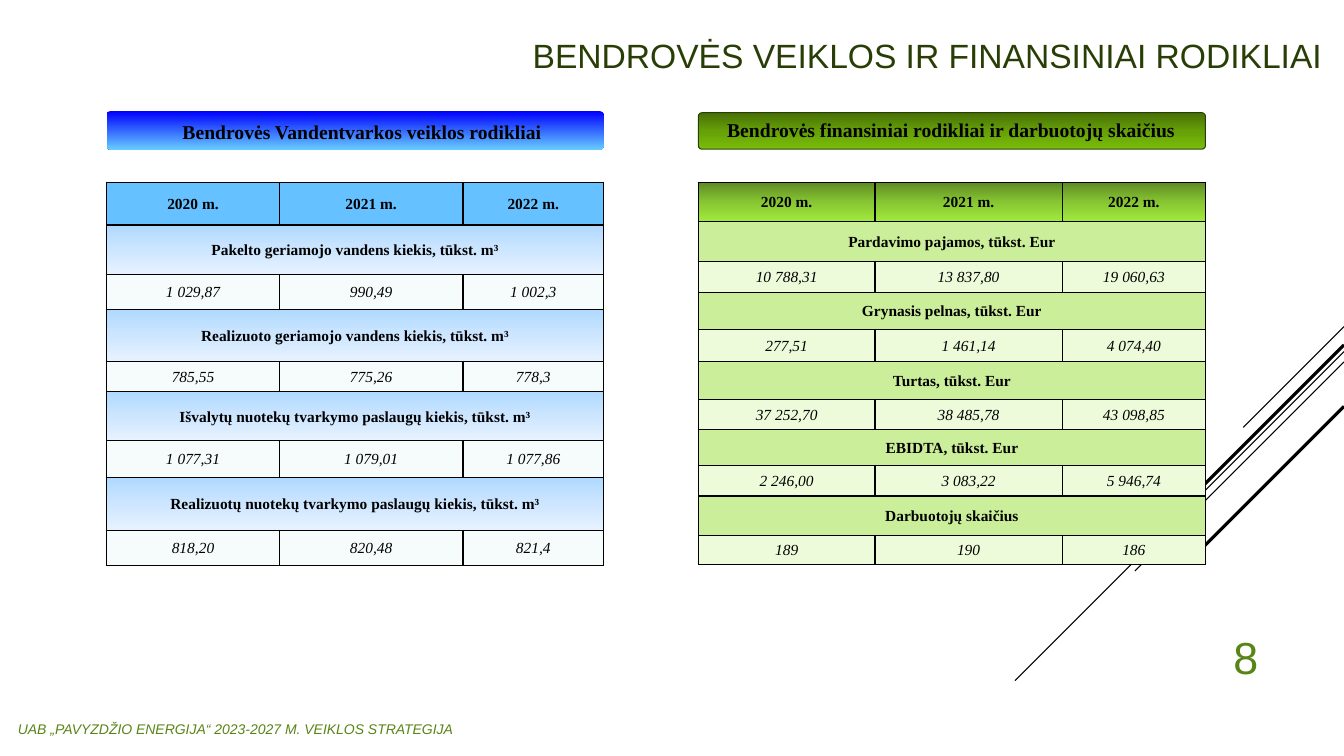
from copy import deepcopy

from lxml.etree import SubElement
from pptx import Presentation
from pptx.dml.color import RGBColor
from pptx.enum.shapes import MSO_CONNECTOR, MSO_SHAPE
from pptx.enum.text import MSO_ANCHOR, MSO_AUTO_SIZE, PP_ALIGN
from pptx.oxml.ns import qn
from pptx.util import Cm, Pt

SLIDE_WIDTH, SLIDE_HEIGHT = 33.87, 19.05
SANS, SERIF = "Arial", "Times New Roman"
BLACK, DARK_GREEN, GREEN = "000000", "293E06", "588517"
YEARS = ["2020 m.", "2021 m.", "2022 m."]

# Top at the right edge, diagonal run, line width
DIAGONALS = [(8.23, 2.54, 0.75), (8.86, 8.29, 0.75), (9.12, 5.27, 0.75),
             (8.69, 4.86, 2.25), (10.24, 3.53, 2.25)]

WATER = {
    "caption": "Bendrovės Vandentvarkos veiklos rodikliai",
    "band": (2.69, 2.8, 12.52, 0.97),
    "caption_box": (0.64, 2.9, 16.97, 0.86),
    "band_fill": ["0000FF", "66CCFF"],
    "band_line": None,
    "table": (2.69, 4.6, 12.52, 9.64),
    "columns": [4.35, 4.63, 3.54],
    "rows": [1.07, 1.25, 0.87, 1.32, 0.76, 1.24, 0.92, 1.34, 0.88],
    "header_fill": ["65C1FF"],
    "name_fill": ["AFD9FF", "CDE6FF", "E7F2FF"],
    "value_fill": ["F6FBFC"],
    "indicators": [
        ("Pakelto geriamojo vandens kiekis, tūkst. m³",
         ["1 029,87", "990,49", "1 002,3"]),
        ("Realizuoto geriamojo vandens kiekis, tūkst. m³",
         ["785,55", "775,26", "778,3"]),
        ("Išvalytų nuotekų tvarkymo paslaugų kiekis, tūkst. m³",
         ["1 077,31", "1 079,01", "1 077,86"]),
        ("Realizuotų nuotekų tvarkymo paslaugų kiekis, tūkst. m³",
         ["818,20", "820,48", "821,4"]),
    ],
}
FINANCE = {
    "caption": "Bendrovės finansiniai rodikliai ir darbuotojų skaičius",
    "band": (17.6, 2.84, 12.78, 0.92),
    "caption_box": (18.03, 2.84, 11.89, 0.86),
    "band_fill": ["487006", "669F08", "79BD09"],
    "band_line": DARK_GREEN,
    "table": (17.6, 4.6, 12.78, 9.63),
    "columns": [4.45, 4.72, 3.61],
    "rows": [0.99, 0.99, 0.79, 0.94, 0.79, 0.97, 0.76, 0.91, 0.76, 0.99, 0.74],
    "header_fill": ["5F8B24", "87C633", "A1EB3D"],
    "name_fill": ["CBEE9A"],
    "value_fill": ["EEFBDA"],
    "indicators": [
        ("Pardavimo pajamos, tūkst. Eur", ["10 788,31", "13 837,80", "19 060,63"]),
        ("Grynasis pelnas, tūkst. Eur", ["277,51", "1 461,14", "4 074,40"]),
        ("Turtas, tūkst. Eur", ["37 252,70", "38 485,78", "43 098,85"]),
        ("EBIDTA, tūkst. Eur", ["2 246,00", "3 083,22", "5 946,74"]),
        ("Darbuotojų skaičius", ["189", "190", "186"]),
    ],
}


def colour(value):
    return RGBColor.from_string(value)


def lengths(box):
    return [Cm(value) for value in box]


def paint(fill, element, colours):
    """Solid fill for one colour, top-to-bottom gradient for several."""
    if len(colours) == 1:
        fill.solid()
        fill.fore_color.rgb = colour(colours[0])
        return
    fill.gradient()
    fill.gradient_angle = 270
    stop_list = next(element.iter(qn("a:gsLst")))
    while len(stop_list) < len(colours):
        stop_list.append(deepcopy(stop_list[-1]))
    for index, stop in enumerate(fill.gradient_stops):
        stop.color.rgb = colour(colours[index])
        stop.position = index / (len(colours) - 1)


def write(text_frame, text, text_colour, alignment, **font_format):
    paragraph = text_frame.paragraphs[0]
    paragraph.alignment = alignment
    run = paragraph.add_run()
    run.text = text
    run.font.color.rgb = colour(text_colour)
    for name, value in font_format.items():
        setattr(run.font, name, value)
    return paragraph


def add_text(slide, box, text, text_colour, alignment, anchor=MSO_ANCHOR.TOP, **font_format):
    text_frame = slide.shapes.add_textbox(*lengths(box)).text_frame
    text_frame.word_wrap = True
    text_frame.vertical_anchor = anchor
    write(text_frame, text, text_colour, alignment, **font_format)


def add_diagonals(slide, right):
    for top, run, width in DIAGONALS:
        line = slide.shapes.add_connector(
            MSO_CONNECTOR.STRAIGHT, *lengths((right, top, right - run, top + run)))
        line.line.color.rgb = colour(BLACK)
        line.line.width = Pt(width)
        SubElement(line.element.spPr, qn("a:effectLst"))


def add_title(slide, box, text):
    title = slide.shapes.title
    for name, value in zip(("left", "top", "width", "height"), lengths(box)):
        setattr(title, name, value)
    title.text_frame.auto_size = MSO_AUTO_SIZE.NONE
    title.text_frame.vertical_anchor = MSO_ANCHOR.MIDDLE
    write(title.text_frame, text, DARK_GREEN, PP_ALIGN.RIGHT, name=SANS, size=Pt(24))


def add_band(slide, panel):
    band = slide.shapes.add_shape(MSO_SHAPE.ROUNDED_RECTANGLE, *lengths(panel["band"]))
    band.adjustments[0] = 0.1
    band.shadow.inherit = False
    paint(band.fill, band.element, panel["band_fill"])
    if panel["band_line"]:
        band.line.color.rgb = colour(panel["band_line"])
        band.line.width = Pt(0.75)
    else:
        band.line.fill.background()
    add_text(slide, panel["caption_box"], panel["caption"], BLACK, PP_ALIGN.CENTER,
             name=SERIF, size=Pt(14), bold=True)


def format_cell(cell, text, colours, **font_format):
    properties = cell._tc.get_or_add_tcPr()
    for side in ("a:lnL", "a:lnR", "a:lnT", "a:lnB"):
        border = SubElement(properties, qn(side), w=str(Pt(1)))
        SubElement(SubElement(border, qn("a:solidFill")), qn("a:srgbClr"), val=BLACK)
    paint(cell.fill, cell._tc, colours)
    layout = {"margin_left": Cm(0.18), "margin_right": Cm(0.18), "margin_top": 0,
              "margin_bottom": 0, "vertical_anchor": MSO_ANCHOR.MIDDLE}
    for name, value in layout.items():
        setattr(cell, name, value)
    if text:
        paragraph = write(cell.text_frame, text, BLACK, PP_ALIGN.CENTER,
                          name=SERIF, size=Pt(11), **font_format)
        paragraph.line_spacing = 1.07


def add_indicator_table(slide, panel):
    table = slide.shapes.add_table(
        len(panel["rows"]), len(panel["columns"]), *lengths(panel["table"])).table
    table.first_row = table.horz_banding = False
    for column, width in zip(table.columns, panel["columns"]):
        column.width = Cm(width)
    for row, height in zip(table.rows, panel["rows"]):
        row.height = Cm(height)

    # Year header, then a merged name row and a value row per indicator
    rows = [(YEARS, panel["header_fill"], {"bold": True})]
    for name, values in panel["indicators"]:
        rows.append(([name, "", ""], panel["name_fill"], {"bold": True}))
        rows.append((values, panel["value_fill"], {"italic": True}))
    for row_index, (texts, fill, font_format) in enumerate(rows):
        for column_index, text in enumerate(texts):
            format_cell(table.cell(row_index, column_index), text, fill, **font_format)
        if not texts[1]:
            table.cell(row_index, 0).merge(table.cell(row_index, len(texts) - 1))


def main():
    presentation = Presentation()
    presentation.slide_width = Cm(SLIDE_WIDTH)
    presentation.slide_height = Cm(SLIDE_HEIGHT)
    slide = presentation.slides.add_slide(presentation.slide_layouts[5])

    add_diagonals(slide, SLIDE_WIDTH)
    add_title(slide, (9.5, 0, 24.08, 2.79), "BENDROVĖS VEIKLOS IR FINANSINIAI RODIKLIAI")

    # Footer and slide number
    add_text(slide, (0.2, 18.03, 20.96, 1.02),
             "UAB „PAVYZDŽIO ENERGIJA“ 2023-2027 M. VEIKLOS STRATEGIJA",
             GREEN, PP_ALIGN.LEFT, name=SANS, size=Pt(10), italic=True)
    add_text(slide, (28.78, 15.49, 3.18, 1.85), "8", GREEN, PP_ALIGN.RIGHT,
             MSO_ANCHOR.BOTTOM, name=SANS, size=Pt(32))

    # Water indicators on the left, financial ones on the right
    for panel in (WATER, FINANCE):
        add_indicator_table(slide, panel)
        add_band(slide, panel)

    presentation.save("out.pptx")


if __name__ == "__main__":
    main()
